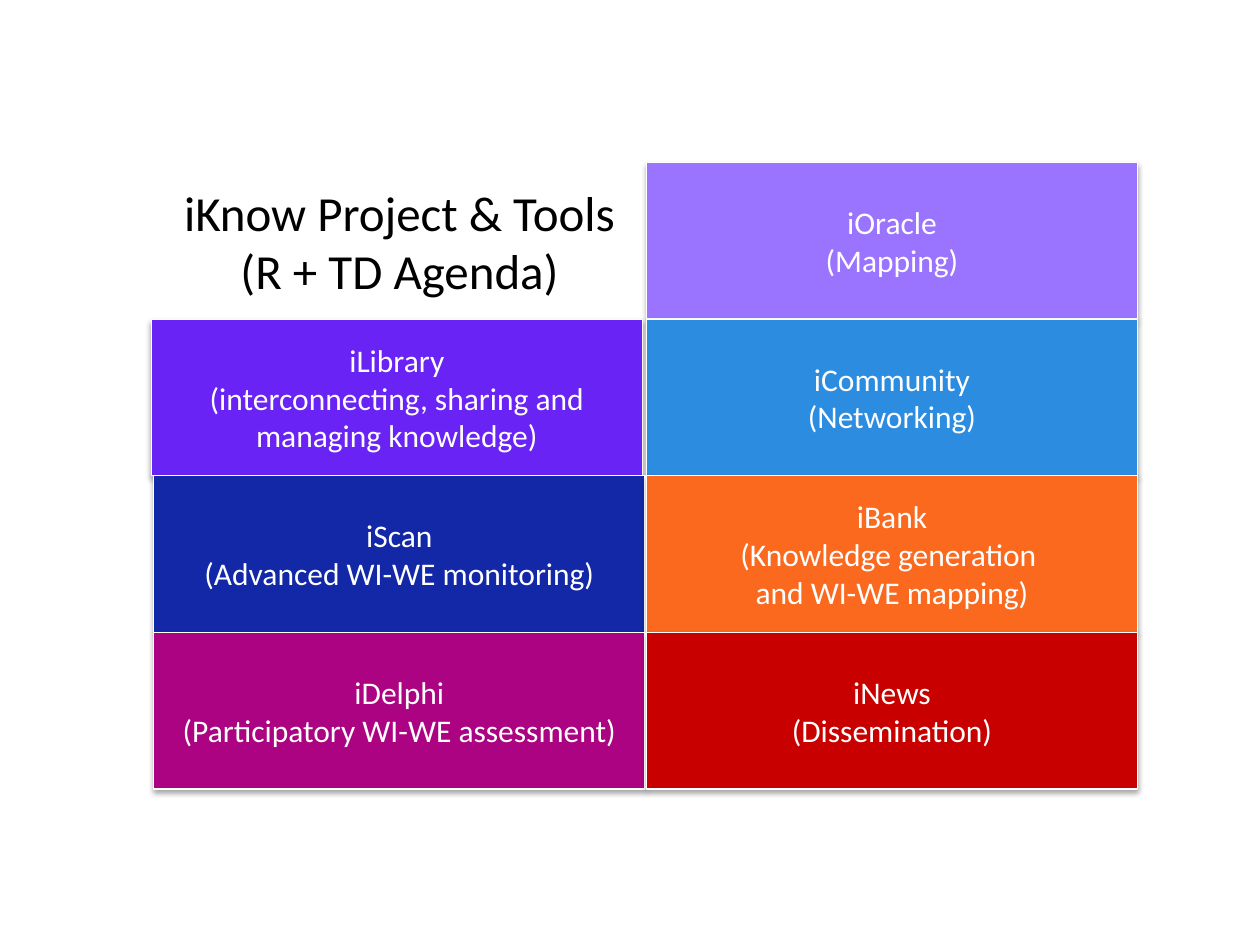
"""Build the slide of iKnow project tools as a two-column grid of coloured tiles."""
from dataclasses import dataclass

import lxml.etree
import pptx
import pptx.dml.color
import pptx.enum.shapes
import pptx.enum.text
import pptx.oxml.ns
import pptx.util


@dataclass(frozen=True)
class Theme:
    font: str = "Calibri"
    title_size: int = 28
    tile_size: int = 18
    dark: str = "000000"
    light: str = "FFFFFF"
    line_width: float = 0.75
    shadow_blur: float = 3.15
    shadow_distance: float = 1.81
    shadow_opacity: int = 35


@dataclass(frozen=True)
class Grid:
    left: float = 1.22
    top: float = 1.29
    column_pitch: float = 3.91
    cell_width: float = 3.9
    row_height: float = 3.73 / 3

    def box(self, column: int, row: int, nudge: float = 0) -> tuple:
        lengths = (
            self.left + column * self.column_pitch + nudge,
            self.top + row * self.row_height,
            self.cell_width,
            self.row_height,
        )
        return tuple(pptx.util.Inches(length) for length in lengths)


@dataclass(frozen=True)
class Tile:
    column: int
    row: int
    fill: str
    name: str
    purpose: str
    nudge: float = 0


THEME = Theme()
GRID = Grid()
TITLE = ("iKnow Project & Tools", "(R + TD Agenda)")
TILES = (
    Tile(1, 0, "9A73FF", "iOracle", "(Mapping)"),
    Tile(0, 1, "6923F4", "iLibrary",
         "(interconnecting, sharing and managing knowledge)", nudge=-0.02),
    Tile(1, 1, "2C8CE0", "iCommunity", "(Networking)"),
    Tile(0, 2, "1328A7", "iScan", "(Advanced WI-WE monitoring)"),
    Tile(1, 2, "FB691E", "iBank", "(Knowledge generation \nand WI-WE mapping)"),
    Tile(0, 3, "AB0381", "iDelphi", "(Participatory WI-WE assessment)"),
    Tile(1, 3, "C90000", "iNews", "(Dissemination)"),
)


def rgb(value: str) -> pptx.dml.color.RGBColor:
    return pptx.dml.color.RGBColor.from_string(value)


def write_text(shape, paragraphs: tuple, size: int, color: str) -> None:
    frame = shape.text_frame
    frame.word_wrap = True
    frame.auto_size = pptx.enum.text.MSO_AUTO_SIZE.NONE
    frame.vertical_anchor = pptx.enum.text.MSO_ANCHOR.MIDDLE
    for index, text in enumerate(paragraphs):
        paragraph = frame.add_paragraph() if index else frame.paragraphs[0]
        paragraph.alignment = pptx.enum.text.PP_ALIGN.CENTER
        for line_index, line in enumerate(text.split("\n")):
            if line_index:
                paragraph.add_line_break()
            run = paragraph.add_run()
            run.text = line
            run.font.name = THEME.font
            run.font.size = pptx.util.Pt(size)
            run.font.color.rgb = rgb(color)


def add_shadow(shape) -> None:
    shape.shadow.inherit = False
    qn = pptx.oxml.ns.qn
    effects = shape.element.spPr.find(qn("a:effectLst"))
    shadow = lxml.etree.SubElement(
        effects, qn("a:outerShdw"),
        blurRad=str(pptx.util.Pt(THEME.shadow_blur)),
        dist=str(pptx.util.Pt(THEME.shadow_distance)),
        dir=str(90 * 60000), rotWithShape="0")
    color = lxml.etree.SubElement(shadow, qn("a:srgbClr"), val=THEME.dark)
    lxml.etree.SubElement(
        color, qn("a:alpha"), val=str(THEME.shadow_opacity * 1000))


def add_tile(slide, tile: Tile) -> None:
    shape = slide.shapes.add_shape(
        pptx.enum.shapes.MSO_SHAPE.RECTANGLE,
        *GRID.box(tile.column, tile.row, tile.nudge))
    shape.fill.solid()
    shape.fill.fore_color.rgb = rgb(tile.fill)
    shape.line.color.rgb = rgb(THEME.light)
    shape.line.width = pptx.util.Pt(THEME.line_width)
    add_shadow(shape)
    write_text(shape, (tile.name, tile.purpose), THEME.tile_size, THEME.light)


def add_title(slide) -> None:
    title = slide.shapes.title
    title.left, title.top, title.width, title.height = GRID.box(0, 0)
    write_text(title, TITLE, THEME.title_size, THEME.dark)


def main() -> None:
    presentation = pptx.Presentation()
    presentation.slide_width = pptx.util.Inches(10)
    presentation.slide_height = pptx.util.Inches(7.5)
    slide = presentation.slides.add_slide(
        presentation.slide_layouts.get_by_name("Title Only"))
    add_title(slide)
    for tile in TILES:
        add_tile(slide, tile)
    presentation.save("out.pptx")


if __name__ == "__main__":
    main()
